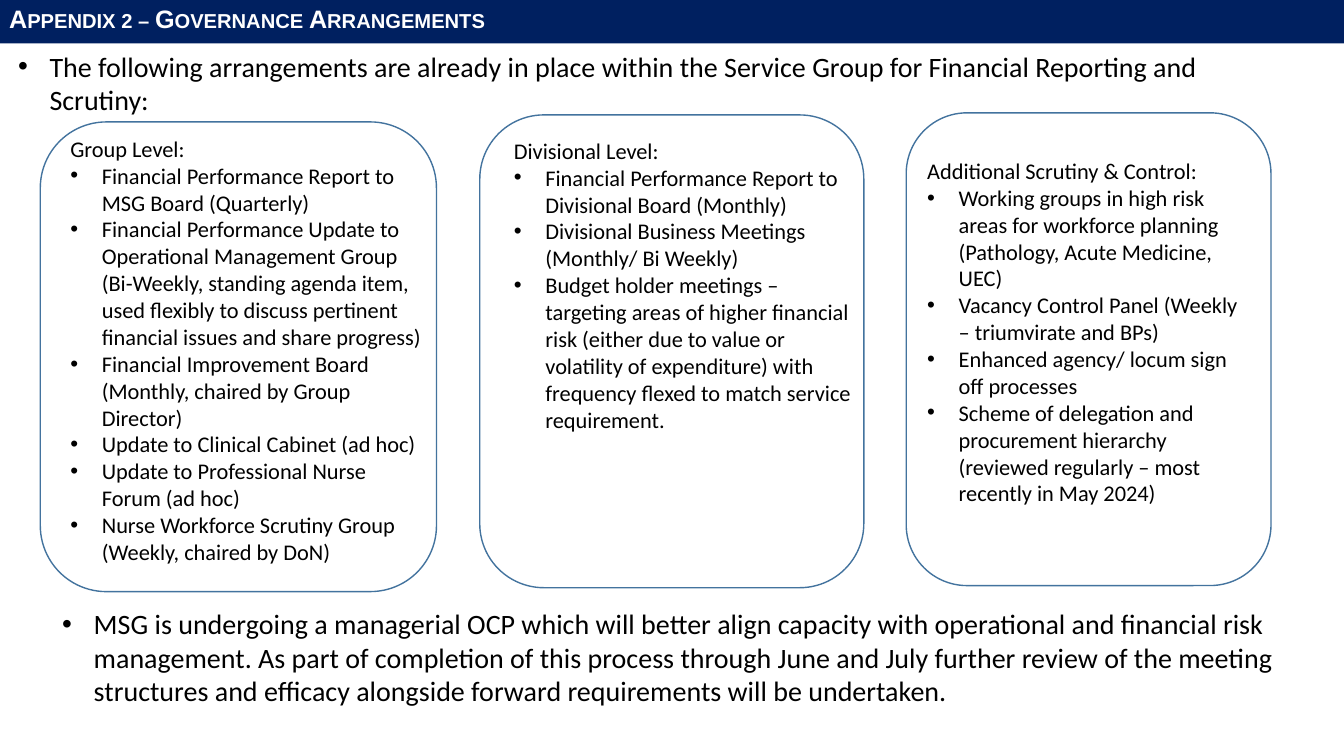
from lxml.etree import SubElement
from pptx import Presentation
from pptx.dml.color import RGBColor
from pptx.enum.shapes import MSO_SHAPE
from pptx.enum.text import MSO_ANCHOR, PP_ALIGN
from pptx.oxml.ns import qn
from pptx.util import Pt

NAVY, BLUE, WHITE, BLACK = "002060", "43739E", "FFFFFF", "000000"
INDENT = Pt(22.5)

INTRODUCTION = (
    "The following arrangements are already in place within the Service Group "
    "for Financial Reporting and Scrutiny:"
)
CONCLUSION = (
    "MSG is undergoing a managerial OCP which will better align capacity with "
    "operational and financial risk management. As part of completion of this process "
    "through June and July further review of the meeting structures and efficacy "
    "alongside forward requirements will be undertaken."
)
PANELS = [
    ((28.8, 87.1, 283, 335.5), (43.2, 92.9, 268.6, 317.5), "Group Level:", [
        "Financial Performance Report to MSG Board (Quarterly)",
        "Financial Performance Update to Operational Management Group (Bi-Weekly, standing "
        "agenda item, used flexibly to discuss pertinent financial issues and share progress)",
        "Financial Improvement Board (Monthly, chaired by Group Director)",
        "Update to Clinical Cabinet (ad hoc)",
        "Update to Professional Nurse Forum (ad hoc)",
        "Nurse Workforce Scrutiny Group (Weekly, chaired by DoN)",
    ]),
    ((647.3, 80.6, 260.6, 337.7), (655.2, 108.7, 243.4, 259.2),
     "Additional Scrutiny & Control:", [
        "Working groups in high risk areas for workforce planning "
        "(Pathology, Acute Medicine, UEC)",
        "Vacancy Control Panel (Weekly – triumvirate and BPs)",
        "Enhanced agency/ locum sign off processes",
        "Scheme of delegation and procurement hierarchy "
        "(reviewed regularly – most recently in May 2024)",
    ]),
    ((342.7, 82.1, 274.3, 337.7), (360, 94.3, 256.3, 264.2), "Divisional Level:", [
        "Financial Performance Report to Divisional Board (Monthly)",
        "Divisional Business Meetings (Monthly/ Bi Weekly)",
        "Budget holder meetings – targeting areas of higher financial risk (either due to value "
        "or volatility of expenditure) with frequency flexed to match service requirement.",
    ]),
]


def colour(value):
    """Turn a hex string into a colour."""
    return RGBColor.from_string(value)


def format_font(font, name, size, value):
    """Set the typeface, size and colour of a font."""
    font.name, font.size = name, Pt(size)
    font.color.rgb = colour(value)


def add_bullet(paragraph):
    """Give a paragraph a hanging round bullet."""
    properties = paragraph._p.get_or_add_pPr()
    properties.set("marL", str(INDENT))
    properties.set("indent", str(-INDENT))
    SubElement(properties, qn("a:buFont"), typeface="Arial")
    SubElement(properties, qn("a:buChar"), char="•")


def add_box(slide, kind, place, fill, line=None):
    """Draw a filled preset shape, outlined when a line colour is given."""
    shape = slide.shapes.add_shape(kind, *map(Pt, place))
    shape.shadow.inherit = False
    shape.fill.solid()
    shape.fill.fore_color.rgb = colour(fill)
    if line:
        shape.line.color.rgb = colour(line)
        shape.line.width = Pt(1)
    else:
        shape.line.fill.background()
    return shape


def add_list(slide, place, size, bullets, heading=None):
    """Write a bulleted list under an optional plain heading."""
    text_frame = slide.shapes.add_textbox(*map(Pt, place)).text_frame
    text_frame.word_wrap = True
    lines = [heading, *bullets] if heading else bullets
    text_frame.text = "\n".join(lines)
    for paragraph in text_frame.paragraphs:
        format_font(paragraph.runs[0].font, "Calibri", size, BLACK)
    for paragraph in text_frame.paragraphs[-len(bullets):]:
        add_bullet(paragraph)


def add_panel(slide, place, text_place, heading, bullets):
    """Draw a rounded panel with its list."""
    add_box(slide, MSO_SHAPE.ROUNDED_RECTANGLE, place, WHITE, BLUE)
    add_list(slide, text_place, 16, bullets, heading)


def add_title_bar(slide, title):
    """Draw the title band with small capitals."""
    text_frame = add_box(slide, MSO_SHAPE.RECTANGLE, (0, -1.4, 960, 32.4), NAVY).text_frame
    text_frame.margin_left = text_frame.margin_right = Pt(6.5)
    text_frame.margin_top = text_frame.margin_bottom = Pt(3)
    text_frame.vertical_anchor = MSO_ANCHOR.MIDDLE
    text_frame.text = title
    paragraph = text_frame.paragraphs[0]
    paragraph.alignment = PP_ALIGN.LEFT
    paragraph.line_spacing = 0.9
    paragraph.space_before = Pt(10)
    run = paragraph.runs[0]
    format_font(run.font, "Arial", 18, WHITE)
    run.font.bold = True
    run._r.get_or_add_rPr().set("cap", "small")


def main():
    """Build and save the governance slide."""
    presentation = Presentation()
    presentation.slide_width, presentation.slide_height = Pt(960), Pt(540)
    slide = presentation.slides.add_slide(presentation.slide_layouts[6])
    add_list(slide, (5.8, 31.7, 902.2, 121), 20, [INTRODUCTION])
    for panel in PANELS:
        add_panel(slide, *panel)
    add_list(slide, (37.4, 429.8, 883.4, 100), 20, [CONCLUSION])
    add_title_bar(slide, "Appendix 2 – Governance Arrangements")
    presentation.save("out.pptx")


if __name__ == "__main__":
    main()
